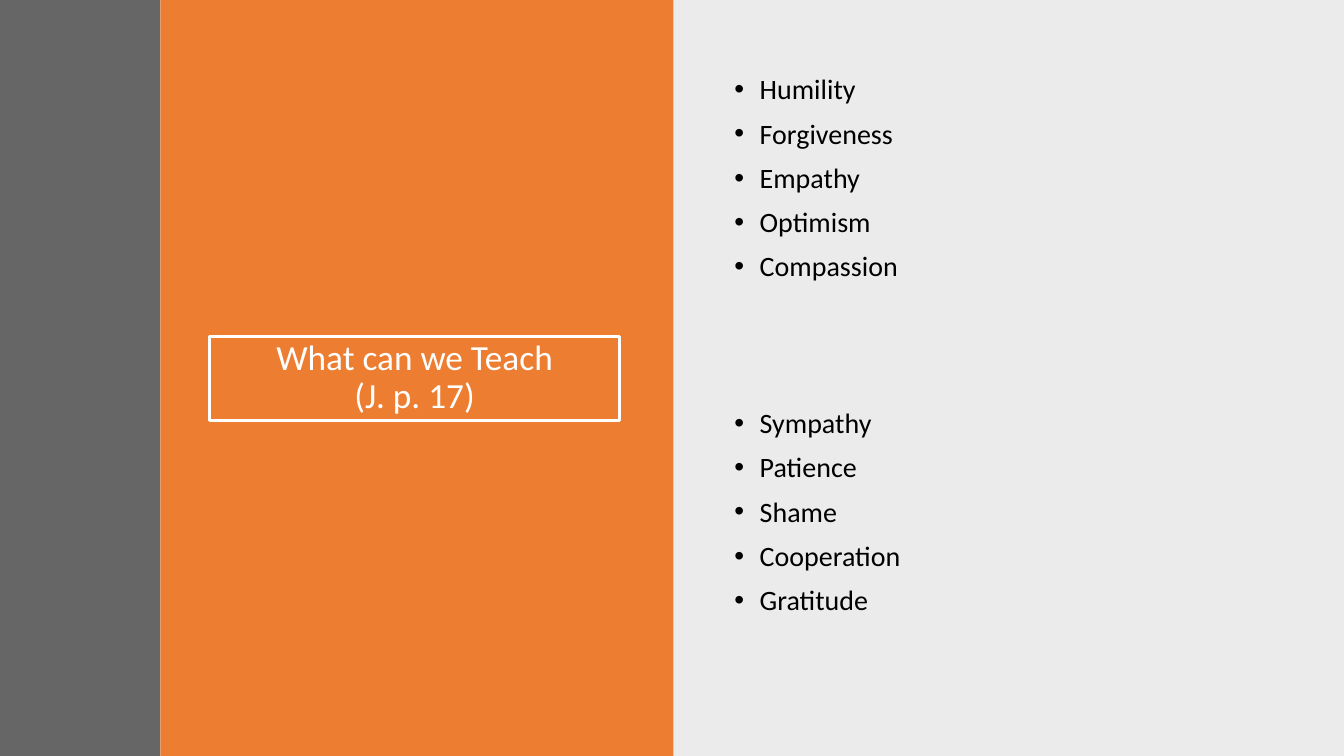
from collections import namedtuple

from lxml.etree import SubElement
from pptx import Presentation
from pptx.dml.color import RGBColor
from pptx.enum.shapes import MSO_SHAPE
from pptx.enum.text import MSO_ANCHOR, PP_ALIGN
from pptx.oxml.ns import qn
from pptx.util import Cm, Pt

Box = namedtuple("Box", "left top width height")

COLORS = {
    "strip": "404040",
    "title_panel": "ED7D31",
    "list_panel": "000000",
    "title": "FFFFFF",
    "body": "000000",
}
FONT = "Calibri"
PAGE_WIDTH, PAGE_HEIGHT = 33.87, 19.05
STRIP_WIDTH = 4.04
TITLE_PANEL_WIDTH = 12.93
LIST_PANEL_LEFT = PAGE_WIDTH / 2
TRAIT_GROUPS = [
    ["Humility", "Forgiveness", "Empathy", "Optimism", "Compassion"],
    ["Sympathy", "Patience", "Shame", "Cooperation", "Gratitude"],
]


def color(name):
    return RGBColor.from_string(COLORS[name])


def lengths(box):
    return [Cm(value) for value in box]


def add_panel(page, box, name, opacity=100):
    panel = page.shapes.add_shape(MSO_SHAPE.RECTANGLE, *lengths(box))
    panel.shadow.inherit = False
    panel.fill.solid()
    panel.fill.fore_color.rgb = color(name)
    panel.line.fill.background()
    if opacity < 100:
        tint = panel.fill._xPr.find(f".//{qn('a:srgbClr')}")
        SubElement(tint, qn("a:alpha"), val=str(opacity * 1000))


def format_runs(para, size, name):
    para.line_spacing = 0.9
    for span in para.runs:
        span.font.name = FONT
        span.font.size = Pt(size)
        span.font.color.rgb = color(name)


def add_bullet(para):
    indent = Cm(0.64)
    properties = para._p.get_or_add_pPr()
    properties.set("marL", str(indent))
    properties.set("indent", str(-indent))
    SubElement(properties, qn("a:buFont"), typeface="Arial")
    SubElement(properties, qn("a:buChar"), char="•")


def add_title_region(page, box):
    add_panel(page, box, "title_panel")
    frame_box = Box(box.left + 1.24, box.top + 8.48, 10.34, 2.11)
    frame = page.shapes.add_shape(MSO_SHAPE.RECTANGLE, *lengths(frame_box))
    frame.shadow.inherit = False
    frame.fill.background()
    frame.line.color.rgb = color("title")
    frame.line.width = Pt(2)
    frame.text_frame.word_wrap = True
    frame.text_frame.vertical_anchor = MSO_ANCHOR.MIDDLE
    para = frame.text_frame.paragraphs[0]
    para.text = "What can we Teach\n(J. p. 17)"
    para.alignment = PP_ALIGN.CENTER
    format_runs(para, 25.2, "title")


def add_trait_list(page, box, traits):
    text_frame = page.shapes.add_textbox(*lengths(box)).text_frame
    text_frame.word_wrap = True
    text_frame.text = "\n".join(traits)
    for para in text_frame.paragraphs:
        format_runs(para, 20, "body")
        para.space_before = Pt(10)
        add_bullet(para)


def add_list_region(page, box):
    for index, traits in enumerate(TRAIT_GROUPS):
        list_box = Box(box.left + 1.32, box.top + 1.78 + index * 8.41, 14.05, 7.09)
        add_trait_list(page, list_box, traits)


def main():
    deck = Presentation()
    deck.slide_width, deck.slide_height = Cm(PAGE_WIDTH), Cm(PAGE_HEIGHT)
    page = deck.slides.add_slide(deck.slide_layouts[6])
    list_region = Box(LIST_PANEL_LEFT, 0, PAGE_WIDTH - LIST_PANEL_LEFT, PAGE_HEIGHT)
    add_panel(page, list_region, "list_panel", opacity=8)
    add_title_region(page, Box(STRIP_WIDTH, 0, TITLE_PANEL_WIDTH, PAGE_HEIGHT))
    add_panel(page, Box(0, 0, STRIP_WIDTH, PAGE_HEIGHT), "strip", opacity=80)
    add_list_region(page, list_region)
    deck.save("out.pptx")


if __name__ == "__main__":
    main()
